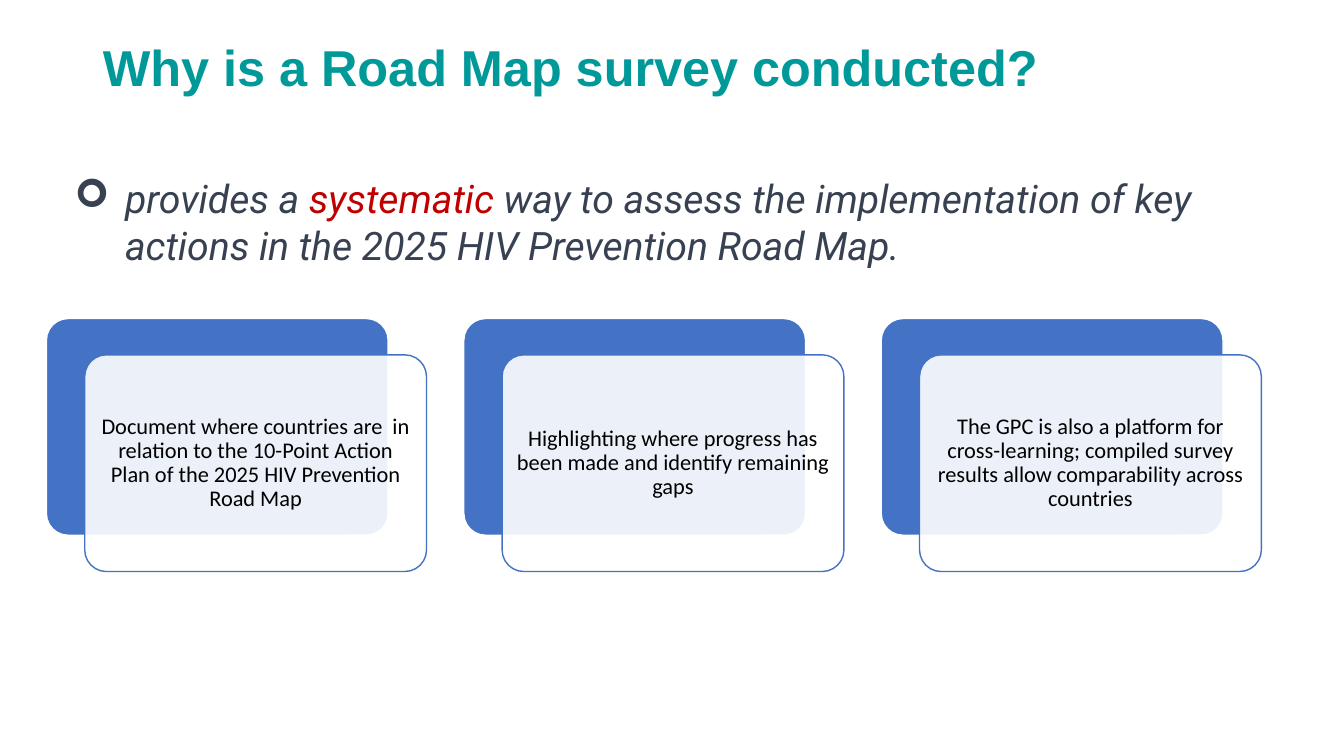
from lxml.etree import SubElement
from pptx import Presentation
from pptx.dml.color import RGBColor
from pptx.enum.shapes import MSO_SHAPE
from pptx.enum.text import MSO_ANCHOR, MSO_AUTO_SIZE, PP_ALIGN
from pptx.oxml.ns import qn
from pptx.util import Pt

PX = 9144
COLORS = {
    "title": "009999",
    "body": "374151",
    "accent": "C00000",
    "card": "4472C4",
    "white": "FFFFFF",
    "text": "000000",
}
TITLE_FONT = {"name": "Arial", "size": Pt(36), "bold": True}
BODY_FONT = {"name": "Roboto", "size": Pt(28), "italic": True}
CARD_FONT = {"name": "Calibri", "size": Pt(16)}

CARD_LEFT, CARD_TOP, CARD_PITCH = 46, 316, 414
CARD_WIDTH, CARD_HEIGHT = 339, 215
FRONT_SHIFT_X, FRONT_SHIFT_Y = 38, 36
REASONS = [
    "Document where countries are  in relation to the 10-Point Action Plan of the 2025 HIV Prevention Road Map",
    "Highlighting where progress has been made and identify remaining gaps",
    "The GPC is also a platform for cross-learning; compiled survey results allow comparability across countries",
]


class SlideBuilder:
    """Draws styled elements on one slide, with lengths in px."""

    def __init__(self, presentation):
        self.slide = presentation.slides.add_slide(presentation.slide_layouts[1])

    def color(self, name):
        return RGBColor.from_string(COLORS[name])

    def apply(self, target, values):
        for name, value in values.items():
            setattr(target, name, value)

    def place(self, shape, left, top, width, height):
        box = {"left": left, "top": top, "width": width, "height": height}
        self.apply(shape, {name: value * PX for name, value in box.items()})

    def add_text(self, paragraph, text, font, color):
        run = paragraph.add_run()
        run.text = text
        self.apply(run.font, font)
        run.font.color.rgb = self.color(color)

    def placeholder(self, shape, box, line_spacing):
        self.place(shape, *box)
        self.apply(shape.text_frame, {
            "word_wrap": True,
            "auto_size": MSO_AUTO_SIZE.NONE,
            "vertical_anchor": MSO_ANCHOR.TOP,
        })
        paragraph = shape.text_frame.paragraphs[0]
        self.apply(paragraph, {
            "alignment": PP_ALIGN.LEFT,
            "line_spacing": line_spacing,
            "space_before": Pt(0),
        })
        return paragraph

    def title(self, text, box):
        paragraph = self.placeholder(self.slide.shapes.title, box, 0.9)
        self.add_text(paragraph, text, TITLE_FONT, "title")

    def bullet(self, parts, box, indent):
        paragraph = self.placeholder(self.slide.placeholders[1], box, 1.0)
        properties = paragraph._p.get_or_add_pPr()
        properties.set("marL", str(indent * PX))
        properties.set("indent", str(-indent * PX))
        SubElement(properties, qn("a:buFont"), typeface="Wingdings")
        SubElement(properties, qn("a:buChar"), char="➢")
        for text, color in parts:
            self.add_text(paragraph, text, BODY_FONT, color)

    def panel(self, left, top, fill, line):
        shape = self.slide.shapes.add_shape(MSO_SHAPE.ROUNDED_RECTANGLE, 0, 0, PX, PX)
        self.place(shape, left, top, CARD_WIDTH, CARD_HEIGHT)
        shape.adjustments[0] = 0.1
        shape.shadow.inherit = False
        shape.fill.solid()
        shape.fill.fore_color.rgb = self.color(fill)
        shape.line.color.rgb = self.color(line)
        shape.line.width = Pt(1)
        return shape

    def card(self, left, top, text):
        self.panel(left, top, "card", "white")
        front = self.panel(left + FRONT_SHIFT_X, top + FRONT_SHIFT_Y, "white", "card")
        fill_color = front._element.spPr.find(qn("a:solidFill"))[0]
        SubElement(fill_color, qn("a:alpha"), val="90000")
        frame = front.text_frame
        self.apply(frame, {"word_wrap": True, "vertical_anchor": MSO_ANCHOR.MIDDLE})
        self.apply(frame, {f"margin_{side}": 7 * PX for side in ("left", "top", "right", "bottom")})
        paragraph = frame.paragraphs[0]
        self.apply(paragraph, {"alignment": PP_ALIGN.CENTER, "line_spacing": 0.9})
        self.add_text(paragraph, text, CARD_FONT, "text")


def main():
    presentation = Presentation()
    presentation.slide_width = 1333 * PX
    presentation.slide_height = 750 * PX
    builder = SlideBuilder(presentation)
    builder.title("Why is a Road Map survey conducted?", (92, 38, 1190, 80))
    builder.bullet([
        ("provides a ", "body"),
        ("systematic", "accent"),
        (" way to assess the implementation of key actions in the 2025 HIV Prevention Road Map.", "body"),
    ], (64, 168, 1186, 104), 50)
    for index, reason in enumerate(REASONS):
        builder.card(CARD_LEFT + index * CARD_PITCH, CARD_TOP, reason)
    presentation.save("out.pptx")


if __name__ == "__main__":
    main()
